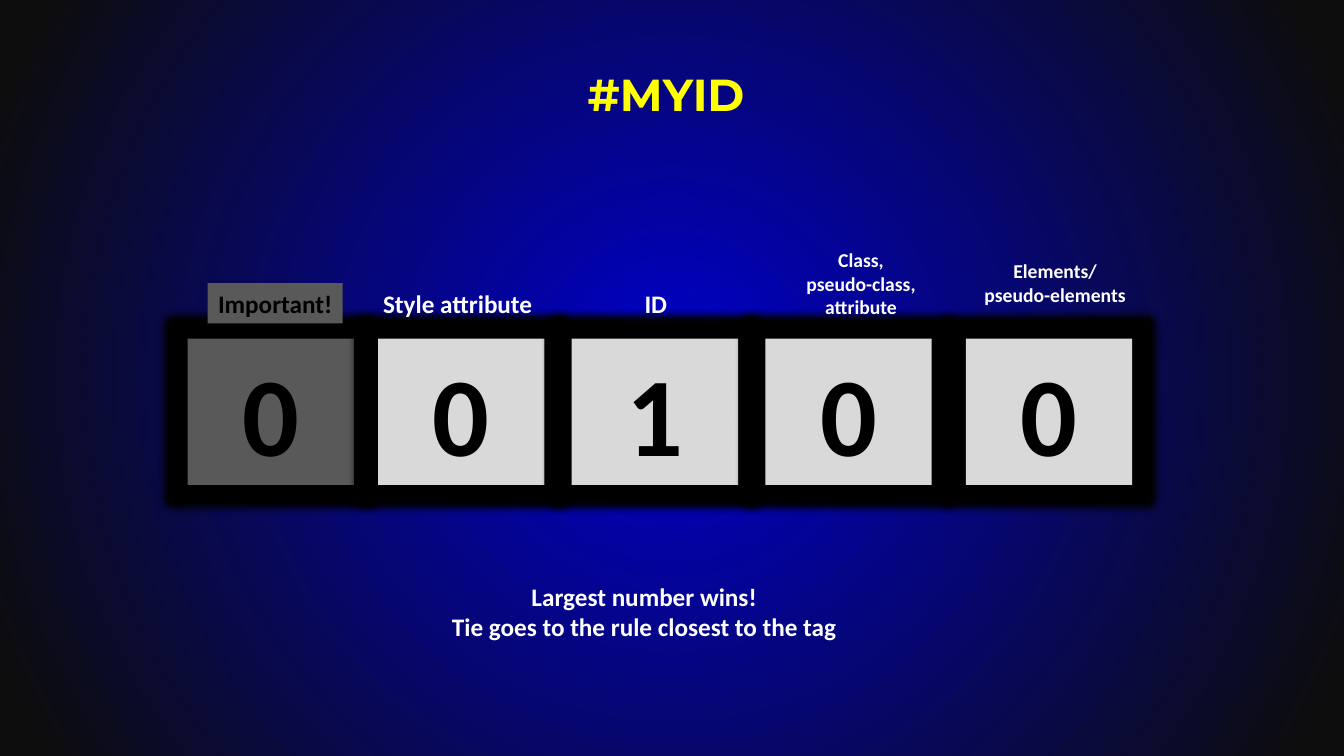
from pptx import Presentation, oxml, util as u
from pptx.dml.color import RGBColor
from pptx.enum import shapes, text
from pptx.oxml.ns import nsdecls

WHITE, BLACK, YELLOW = "FFFFFF", "000000", "FFFF00"
ACTIVE, DIMMED = "D9D9D9", "595959"
BOX_TOP, BOX_WIDTH, BOX_HEIGHT = 3.36, 1.65, 1.45

# Left edge, score and fill of each specificity box
SCORES = [
    (1.86, "0", DIMMED),
    (3.75, "0", ACTIVE),
    (5.67, "1", ACTIVE),
    (7.59, "0", ACTIVE),
    (9.58, "0", ACTIVE),
]

# Place, lines, size and wrapping of each white caption
CAPTIONS = [
    ((3.69, 2.81, 1.7, 0.4), ["Style attribute"], 18, False),
    ((6.29, 2.81, 0.43, 0.4), ["ID"], 18, False),
    ((7.88, 2.41, 1.32, 0.81), ["Class, pseudo-class, attribute"], 14, True),
    ((9.66, 2.52, 1.61, 0.57), ["Elements/", "pseudo-elements"], 14, False),
    ((4.37, 5.72, 4.04, 0.71),
     ["Largest number wins!", "Tie goes to the rule closest to the tag"], 18, False),
]


def rgb(color):
    return RGBColor.from_string(color)


def inches(place):
    return [u.Inches(length) for length in place]


def write(holder, lines, size, color, font="Calibri", wrap=True):
    frame = holder.text_frame
    frame.word_wrap = wrap
    for index, line in enumerate(lines):
        paragraph = frame.add_paragraph() if index else frame.paragraphs[0]
        paragraph.alignment = text.PP_ALIGN.CENTER
        run = paragraph.add_run()
        run.text = line
        run.font.name, run.font.size, run.font.bold = font, u.Pt(size), True
        run.font.color.rgb = rgb(color)
    return frame


def add_caption(slide, place, lines, size, wrap, color=WHITE, font="Calibri"):
    caption = slide.shapes.add_textbox(*inches(place))
    return write(caption, lines, size, color, font, wrap)


def add_panel(slide, place, words, size, fill, wrap=True):
    panel = slide.shapes.add_shape(shapes.MSO_SHAPE.RECTANGLE, *inches(place))
    panel.fill.solid()
    panel.fill.fore_color.rgb = rgb(fill)
    panel.line.fill.background()
    panel.shadow.inherit = False
    write(panel, [words], size, BLACK, wrap=wrap)
    return panel


def add_glow(panel, radius):
    effects = panel._element.spPr.find(oxml.ns.qn("a:effectLst"))
    effects.append(oxml.parse_xml(
        f'<a:glow {nsdecls("a")} rad="{u.Pt(radius)}">'
        f'<a:srgbClr val="{BLACK}"/></a:glow>'))


def set_radial_background(slide, center, edge):
    slide._element.cSld.insert(0, oxml.parse_xml(
        f'<p:bg {nsdecls("p", "a")}><p:bgPr><a:gradFill rotWithShape="1"><a:gsLst>'
        f'<a:gs pos="0"><a:srgbClr val="{center}"/></a:gs>'
        f'<a:gs pos="95000"><a:srgbClr val="{edge}"/></a:gs></a:gsLst>'
        '<a:path path="circle">'
        '<a:fillToRect l="50000" t="50000" r="50000" b="50000"/></a:path>'
        '</a:gradFill><a:effectLst/></p:bgPr></p:bg>'))


def main():
    deck = Presentation()
    deck.slide_width, deck.slide_height = inches((13.33, 7.5))
    slide = deck.slides.add_slide(deck.slide_layouts[6])
    set_radial_background(slide, "0000CC", "0D0D0D")

    # Score boxes
    for left, score, fill in SCORES:
        box = add_panel(slide, (left, BOX_TOP, BOX_WIDTH, BOX_HEIGHT), score, 80, fill)
        add_glow(box, 11)

    # Captions above and below the boxes
    add_panel(slide, (2.06, 2.81, 1.34, 0.4), "Important!", 18, DIMMED, wrap=False)
    for place, lines, size, wrap in CAPTIONS:
        add_caption(slide, place, lines, size, wrap)

    # Title
    title = add_caption(slide, (0.67, 0.3, 12, 1.25), ["#MYID "], 32, True,
                        YELLOW, "Montserrat")
    title.vertical_anchor = text.MSO_ANCHOR.MIDDLE

    deck.save("out.pptx")


if __name__ == "__main__":
    main()
